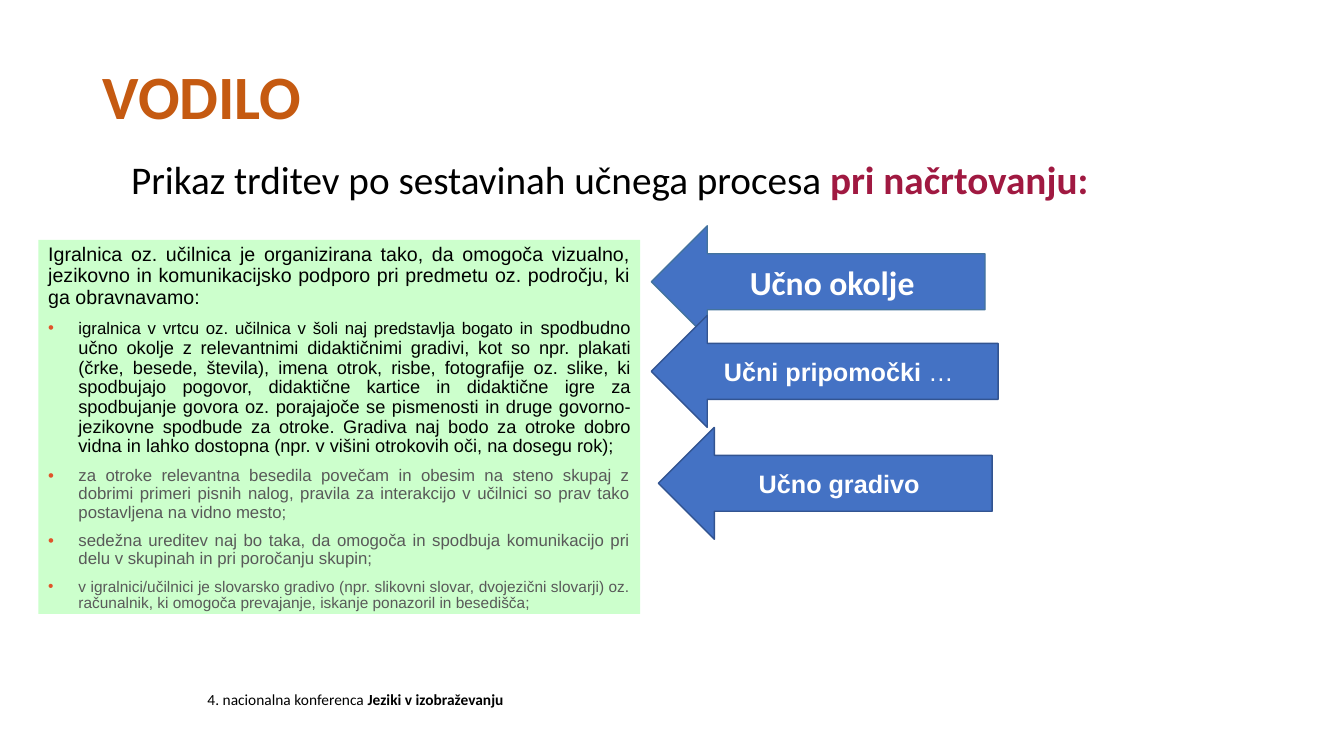
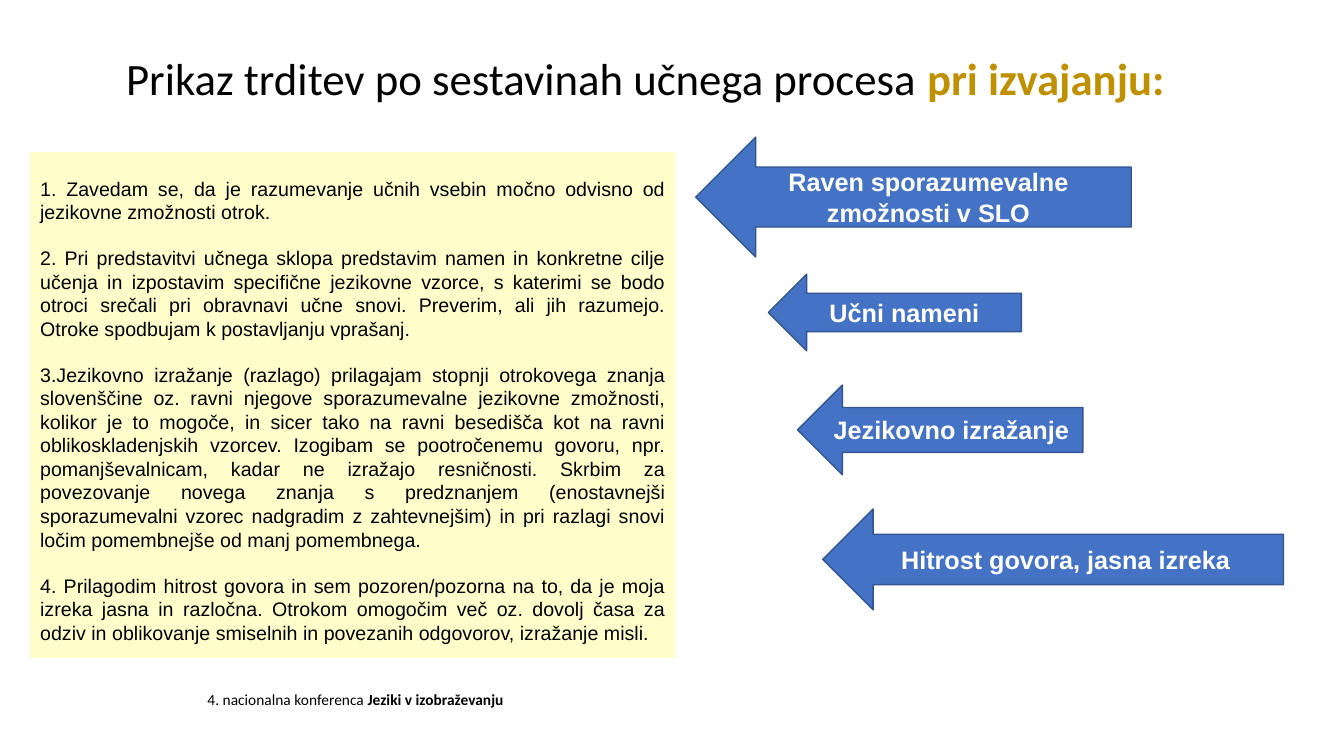
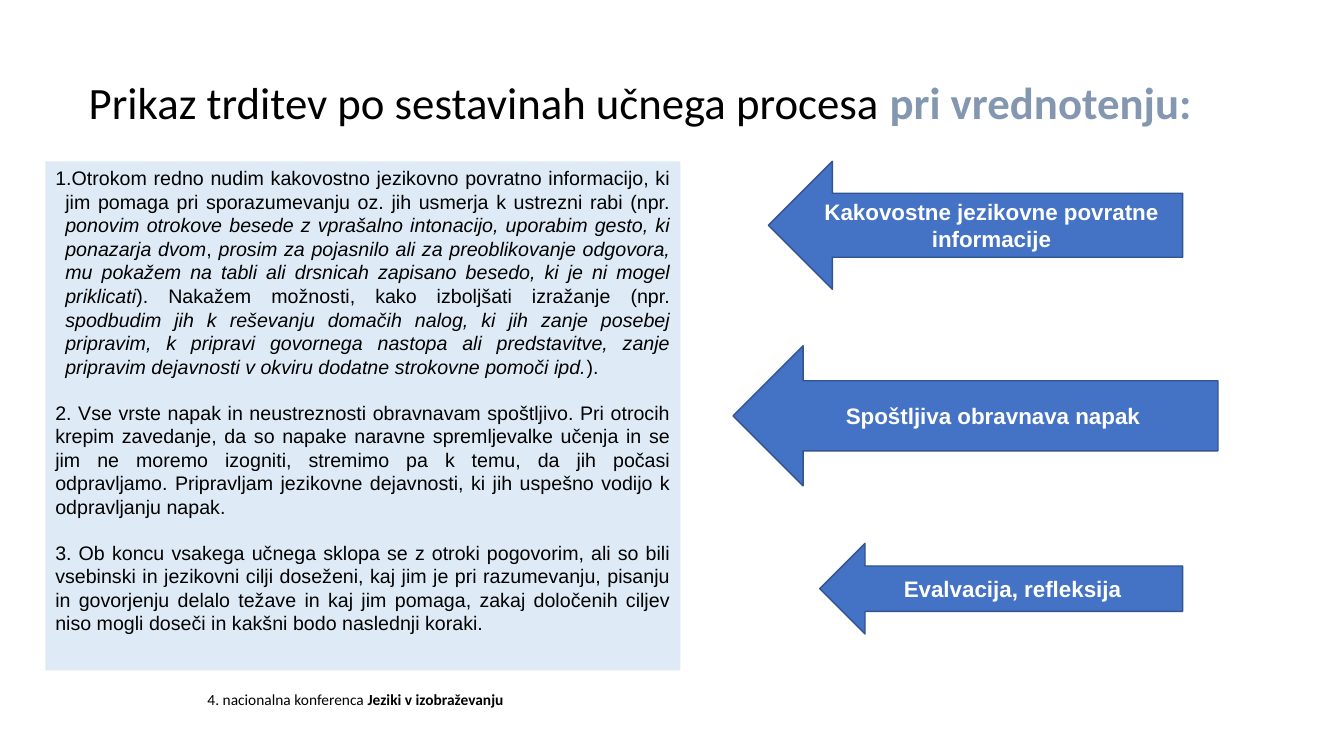
from dataclasses import dataclass

from lxml.etree import SubElement
from pptx import Presentation
from pptx.dml.color import RGBColor
from pptx.enum.shapes import MSO_SHAPE as Preset
from pptx.enum.text import MSO_ANCHOR as Anchor, MSO_AUTO_SIZE as AutoSize, PP_ALIGN as Align
from pptx.oxml.ns import qn
from pptx.util import Inches, Pt


@dataclass(frozen=True)
class Theme:
    heading_font: str = "Calibri"
    text_font: str = "Arial"
    text: str = "000000"
    muted: str = "595959"
    bullet: str = "E05329"
    heading: str = "C55A11"
    planning: str = "A01941"
    teaching: str = "BF9000"
    assessment: str = "8497B0"
    arrow: str = "4472C4"
    arrow_edge: str = "325491"
    first_arrow_edge: str = "43739E"
    on_arrow: str = "FFFFFF"
    green_panel: str = "CCFFCC"
    yellow_panel: str = "FFFFCC"
    blue_panel: str = "DEEBF7"
    heading_size: int = 44
    title_size: int = 32
    subtitle_size: int = 28
    panel_size: int = 14
    footer_size: int = 11
    line_gap: float = 16.1


THEME = Theme()
BOLD, ITALIC = {"bold": True}, {"italic": True}
TOPIC = "Prikaz trditev po sestavinah učnega procesa "
FOOTER = [("4. nacionalna konferenca ", {}), ("Jeziki v izobraževanju", BOLD)]
FOOTER_BOX = (1.96, 6.8, 3.4, 0.29)


def topic(phase, color):
    return [(TOPIC, {}), (phase, {"bold": True, "color": color})]


def bullet(*runs, size=12, color=THEME.muted):
    return {"runs": runs, "size": size, "color": color, "bullet": "•", "indent": 0.3}


def plain(text):
    return {"runs": [(text, {})]}


SLIDES = [
    {
        "title": [("VODILO", {"bold": True, "color": THEME.heading})],
        "title_box": (0.92, 0.4, 11.5, 1.09),
        "title_size": THEME.heading_size,
        "subtitle": topic("pri načrtovanju:", THEME.planning),
        "subtitle_box": (1.2, 1.49, 9.78, 0.89),
        "panel_box": (0.38, 2.38, 5.97, 3.71),
        "panel_fill": THEME.green_panel,
        "gap": 7.5,
        "line_spacing": 0.9,
        "statements": [
            plain("Igralnica oz. učilnica je organizirana tako, da omogoča vizualno, jezikovno in "
                  "komunikacijsko podporo pri predmetu oz. področju, ki ga obravnavamo:"),
            bullet(("igralnica v vrtcu oz. učilnica v šoli naj predstavlja bogato in ", {"size": 12}),
                   ("spodbudno učno okolje z relevantnimi didaktičnimi gradivi, kot so npr. plakati "
                    "(črke, besede, števila), imena otrok, risbe, fotografije oz. slike, ki spodbujajo "
                    "pogovor, didaktične kartice in didaktične igre za spodbujanje govora oz. "
                    "porajajoče se pismenosti in druge govorno-jezikovne spodbude za otroke. Gradiva "
                    "naj bodo za otroke dobro vidna in lahko dostopna (npr. v višini otrokovih oči, "
                    "na dosegu rok);", {}), size=13, color=THEME.text),
            bullet(("za otroke relevantna besedila povečam in obesim na steno skupaj z dobrimi primeri "
                    "pisnih nalog, pravila za interakcijo v učilnici so prav tako postavljena na vidno "
                    "mesto;", {})),
            bullet(("sedežna ureditev naj bo taka, da omogoča in spodbuja komunikacijo pri delu v "
                    "skupinah in pri poročanju skupin;", {})),
            bullet(("v igralnici/učilnici je slovarsko gradivo (npr. slikovni slovar, dvojezični "
                    "slovarji) oz. računalnik, ki omogoča prevajanje, iskanje ponazoril in "
                    "besedišča;", {}), size=11),
        ],
        "arrows": [
            ([("Učno okolje", BOLD)], (6.46, 2.24, 3.31, 1.11),
             {"size": 24, "font": THEME.heading_font, "edge": THEME.first_arrow_edge}),
            ([("Učni pripomočki ", BOLD), ("…", {})], (6.46, 3.13, 3.44, 1.11), {}),
            ([("Učno gradivo", BOLD)], (6.53, 4.24, 3.31, 1.11), {}),
        ],
    },
    {
        "title": topic("pri izvajanju:", THEME.teaching),
        "title_box": (1.15, 0.36, 11.5, 0.81),
        "panel_box": (0.3, 1.51, 6.4, 5.02),
        "panel_fill": THEME.yellow_panel,
        "panel_top": 0.24,
        "statements": [
            plain("1. Zavedam se, da je razumevanje učnih vsebin močno odvisno od jezikovne zmožnosti "
                  "otrok."),
            plain("2. Pri predstavitvi učnega sklopa predstavim namen in konkretne cilje učenja in "
                  "izpostavim specifične jezikovne vzorce, s katerimi se bodo otroci srečali pri "
                  "obravnavi učne snovi. Preverim, ali jih razumejo. Otroke spodbujam k postavljanju "
                  "vprašanj."),
            plain("3.Jezikovno izražanje (razlago) prilagajam stopnji otrokovega znanja slovenščine oz. "
                  "ravni njegove sporazumevalne jezikovne zmožnosti, kolikor je to mogoče, in sicer "
                  "tako na ravni besedišča kot na ravni oblikoskladenjskih vzorcev. Izogibam se "
                  "pootročenemu govoru, npr. pomanjševalnicam, kadar ne izražajo resničnosti. Skrbim za "
                  "povezovanje novega znanja s predznanjem (enostavnejši sporazumevalni vzorec "
                  "nadgradim z zahtevnejšim) in pri razlagi snovi ločim pomembnejše od manj "
                  "pomembnega."),
            plain("4. Prilagodim hitrost govora in sem pozoren/pozorna na to, da je moja izreka jasna "
                  "in razločna. Otrokom omogočim več oz. dovolj časa za odziv in oblikovanje smiselnih "
                  "in povezanih odgovorov, izražanje misli."),
        ],
        "arrows": [
            ([("Raven sporazumevalne zmožnosti v SLO", BOLD)], (6.9, 1.36, 4.32, 1.19), {}),
            ([("Učni nameni", BOLD)], (7.62, 2.72, 2.51, 0.76), {}),
            ([("Jezikovno izražanje", BOLD)], (7.91, 3.82, 2.83, 0.89), {}),
            ([("Hitrost govora, jasna izreka", BOLD)], (8.16, 5.05, 4.57, 1), {}),
        ],
    },
    {
        "title": topic("pri vrednotenju:", THEME.assessment),
        "title_box": (0.78, 0.6, 11.5, 0.81),
        "panel_box": (0.45, 1.6, 6.3, 5.05),
        "panel_fill": THEME.blue_panel,
        "statements": [
            {"runs": [
                ("Otrokom redno nudim kakovostno jezikovno povratno informacijo, ki jim pomaga pri "
                 "sporazumevanju oz. jih usmerja k ustrezni rabi (npr.", {}),
                (" ponovim otrokove besede z vprašalno intonacijo, uporabim gesto, ki ponazarja dvom",
                 ITALIC),
                (", ", {}),
                ("prosim za pojasnilo ali za preoblikovanje odgovora, mu pokažem na tabli ali drsnicah "
                 "zapisano besedo, ki je ni mogel priklicati", ITALIC),
                ("). Nakažem možnosti, kako izboljšati izražanje (npr. ", {}),
                ("spodbudim jih k reševanju domačih nalog, ki jih zanje posebej pripravim, k pripravi "
                 "govornega nastopa ali predstavitve, zanje pripravim dejavnosti v okviru dodatne "
                 "strokovne pomoči ipd.", ITALIC),
                (").", {}),
            ], "numbered": True, "indent": 0.1},
            plain("2. Vse vrste napak in neustreznosti obravnavam spoštljivo. Pri otrocih krepim "
                  "zavedanje, da so napake naravne spremljevalke učenja in se jim ne moremo izogniti, "
                  "stremimo pa k temu, da jih počasi odpravljamo. Pripravljam jezikovne dejavnosti, ki "
                  "jih uspešno vodijo k odpravljanju napak."),
            plain("3. Ob koncu vsakega učnega sklopa se z otroki pogovorim, ali so bili vsebinski in "
                  "jezikovni cilji doseženi, kaj jim je pri razumevanju, pisanju in govorjenju delalo "
                  "težave in kaj jim pomaga, zakaj določenih ciljev niso mogli doseči in kakšni bodo "
                  "naslednji koraki."),
        ],
        "arrows": [
            ([("Kakovostne jezikovne povratne informacije", BOLD)], (7.62, 1.6, 4.11, 1.27),
             {"size": 16}),
            ([("Spoštljiva obravnava napak", BOLD)], (7.27, 3.43, 4.81, 1.39), {"size": 16}),
            ([("Evalvacija, refleksija", BOLD)], (8.13, 5.39, 3.6, 0.9), {"size": 16}),
        ],
    },
]


def inches(box):
    return [Inches(length) for length in box]


def place(shape, box):
    shape.left, shape.top, shape.width, shape.height = inches(box)


def write(paragraph, runs, size, color=THEME.text, font=THEME.heading_font, align=Align.LEFT):
    paragraph.alignment = align
    paragraph.font.name = font
    paragraph.font.size = Pt(size)
    paragraph.font.color.rgb = RGBColor.from_string(color)
    for text, style in runs:
        run = paragraph.add_run()
        run.text = text
        if "bold" in style:
            run.font.bold = style["bold"]
        if "italic" in style:
            run.font.italic = style["italic"]
        if "size" in style:
            run.font.size = Pt(style["size"])
        if "color" in style:
            run.font.color.rgb = RGBColor.from_string(style["color"])


def mark(paragraph, statement):
    """Give the paragraph its hanging indent and its bullet or number."""
    properties = paragraph._p.get_or_add_pPr()
    hang = Inches(statement.get("indent", 0))
    properties.set("marL", str(hang))
    properties.set("indent", str(-hang))
    if "bullet" in statement:
        color = SubElement(properties, qn("a:buClr"))
        SubElement(color, qn("a:srgbClr"), val=THEME.bullet)
        SubElement(properties, qn("a:buFont"), typeface=THEME.text_font)
        SubElement(properties, qn("a:buChar"), char=statement["bullet"])
    elif "numbered" in statement:
        SubElement(properties, qn("a:buAutoNum"), type="arabicPeriod")
    else:
        SubElement(properties, qn("a:buNone"))


def add_block(slide, preset, box, fill):
    block = slide.shapes.add_shape(preset, *inches(box))
    block.shadow.inherit = False
    block.fill.solid()
    block.fill.fore_color.rgb = RGBColor.from_string(fill)
    block.text_frame.word_wrap = True
    return block


def fill_placeholder(holder, box, runs, size, anchor):
    place(holder, box)
    frame = holder.text_frame
    frame.auto_size = AutoSize.NONE
    frame.vertical_anchor = anchor
    heading = frame.paragraphs[0]
    heading.space_before = Pt(0)
    mark(heading, {})
    write(heading, runs, size)


def add_panel(slide, content):
    panel = add_block(slide, Preset.RECTANGLE, content["panel_box"], content["panel_fill"])
    panel.line.fill.background()
    frame = panel.text_frame
    frame.vertical_anchor = Anchor.TOP
    frame.margin_top = Inches(content.get("panel_top", 0.05))
    for index, statement in enumerate(content["statements"]):
        paragraph = frame.add_paragraph() if index else frame.paragraphs[0]
        paragraph.line_spacing = content.get("line_spacing", 1.0)
        if index:
            paragraph.space_before = Pt(content.get("gap", THEME.line_gap))
        mark(paragraph, statement)
        write(paragraph, statement["runs"], statement.get("size", THEME.panel_size),
              statement.get("color", THEME.text), THEME.text_font, Align.JUSTIFY)


def add_arrow(slide, label, box, size=18, font=THEME.text_font, edge=THEME.arrow_edge):
    arrow = add_block(slide, Preset.LEFT_ARROW, box, THEME.arrow)
    arrow.line.color.rgb = RGBColor.from_string(edge)
    arrow.line.width = Pt(1)
    arrow.text_frame.vertical_anchor = Anchor.MIDDLE
    write(arrow.text_frame.paragraphs[0], label, size, THEME.on_arrow, font, Align.CENTER)


def move_footer_to_master(slide, master):
    """Draw the footer through the slide, then hand it to the master for all slides."""
    footer = slide.shapes.add_textbox(*inches(FOOTER_BOX))
    footer.text_frame.word_wrap = True
    write(footer.text_frame.paragraphs[0], FOOTER, THEME.footer_size)
    master.shapes.element.append(footer.element)


def main():
    deck = Presentation()
    deck.slide_width, deck.slide_height = Inches(13.33), Inches(7.5)
    with_subtitle, title_only = deck.slide_layouts[1], deck.slide_layouts[5]
    for content in SLIDES:
        slide = deck.slides.add_slide(with_subtitle if "subtitle" in content else title_only)
        fill_placeholder(slide.shapes.title, content["title_box"], content["title"],
                         content.get("title_size", THEME.title_size), Anchor.MIDDLE)
        if "subtitle" in content:
            fill_placeholder(slide.placeholders[1], content["subtitle_box"], content["subtitle"],
                             THEME.subtitle_size, Anchor.TOP)
        add_panel(slide, content)
        for label, box, options in content["arrows"]:
            add_arrow(slide, label, box, **options)
    move_footer_to_master(deck.slides[0], deck.slide_master)
    deck.save("out.pptx")


if __name__ == "__main__":
    main()
